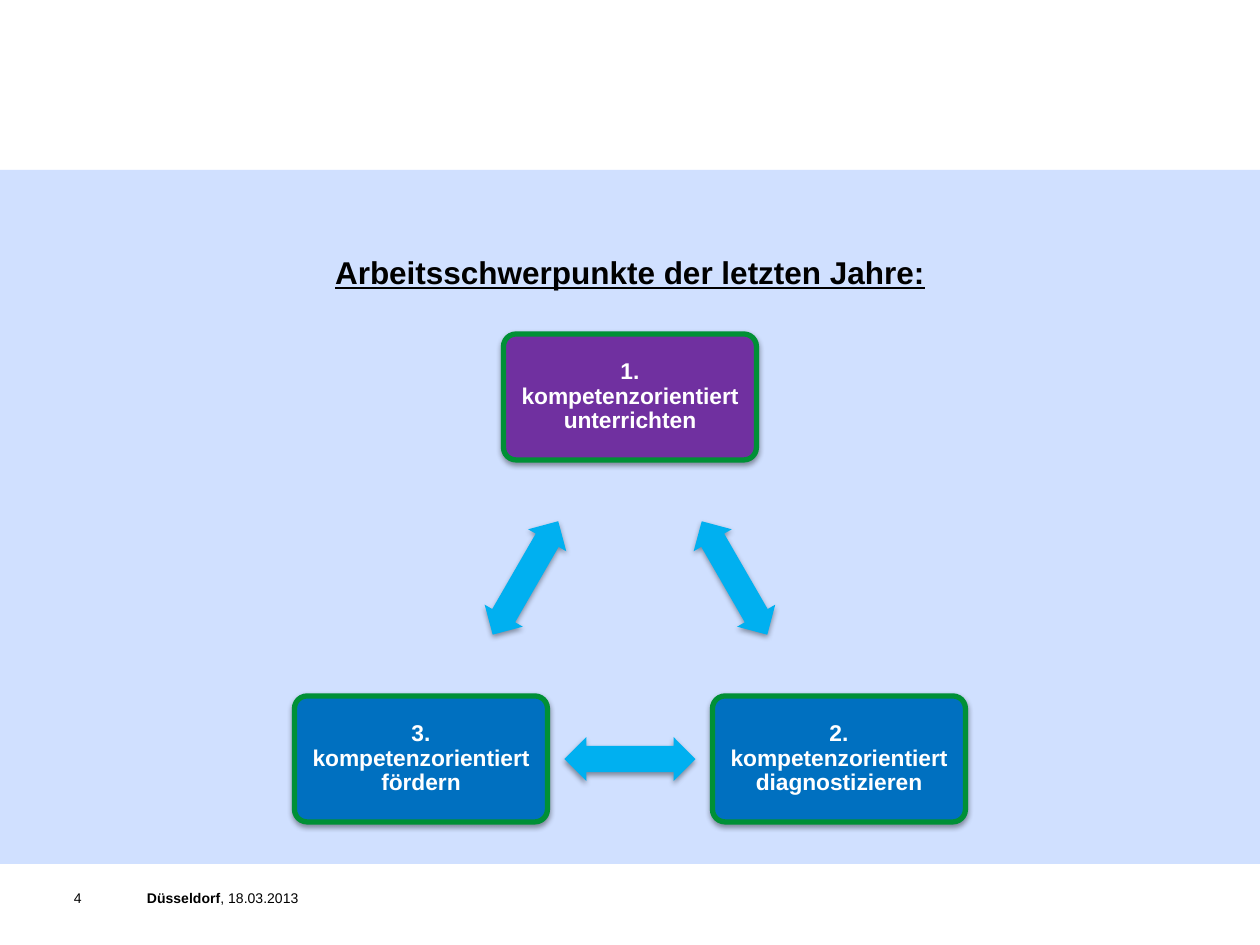
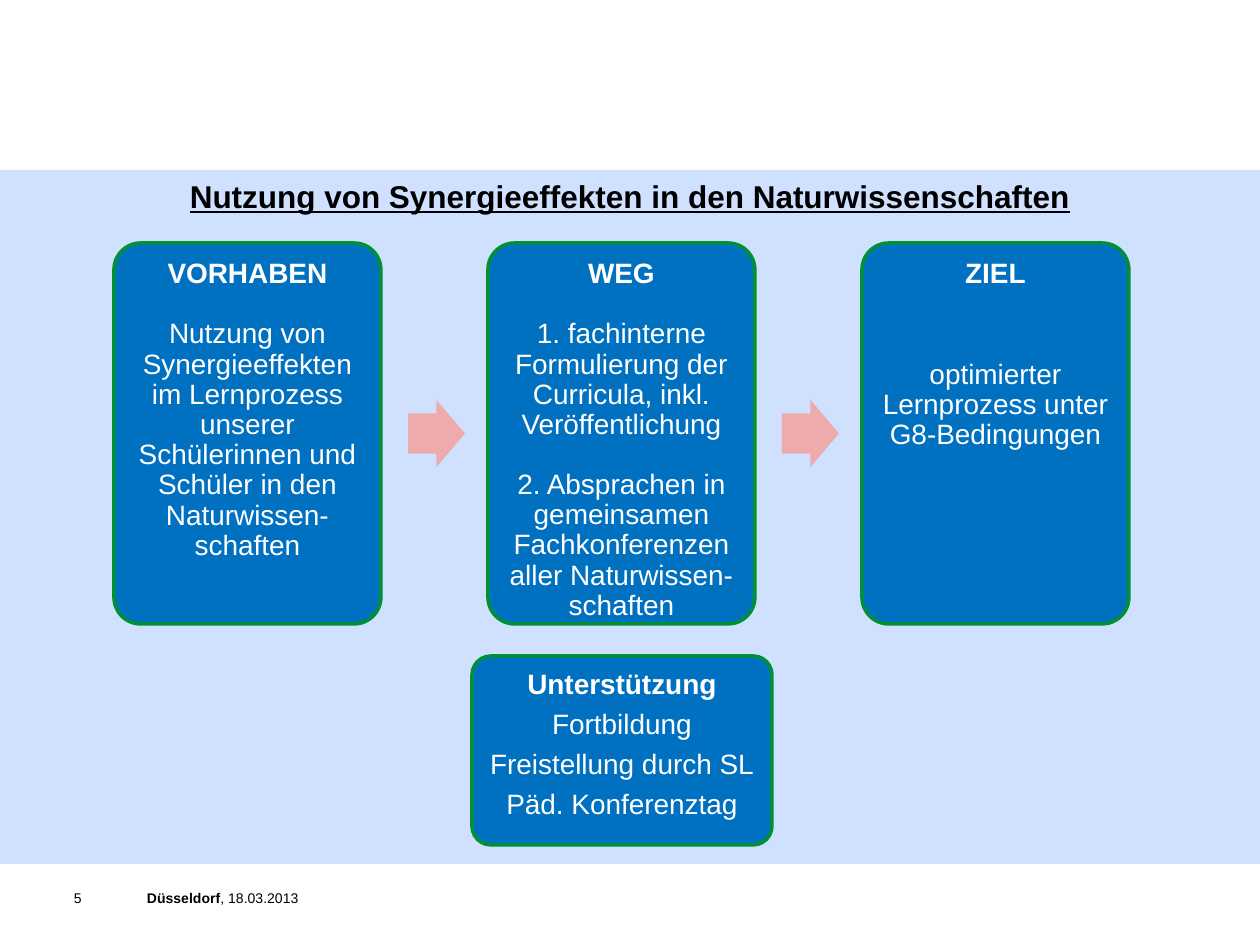
from dataclasses import dataclass
from math import atan2, degrees

from lxml import etree
from pptx import Presentation
from pptx.dml.color import RGBColor
from pptx.enum.shapes import MSO_SHAPE
from pptx.enum.text import MSO_ANCHOR, MSO_AUTO_SIZE, PP_ALIGN
from pptx.oxml import parse_xml
from pptx.oxml.ns import nsdecls, qn
from pptx.util import Pt

RECTANGLE = MSO_SHAPE.RECTANGLE
ROUNDED = MSO_SHAPE.ROUNDED_RECTANGLE
ARROW = MSO_SHAPE.RIGHT_ARROW
DOUBLE_ARROW = MSO_SHAPE.LEFT_RIGHT_ARROW
LEFT, CENTER = PP_ALIGN.LEFT, PP_ALIGN.CENTER
TOP, MIDDLE = MSO_ANCHOR.TOP, MSO_ANCHOR.MIDDLE
FIXED_SIZE = MSO_AUTO_SIZE.NONE
TITLE_ONLY = 5


@dataclass(frozen=True)
class Theme:
    font: str = "Arial"
    ink: str = "000000"
    white: str = "FFFFFF"
    band: str = "6699FF"
    band_opacity: int = 30
    blue: str = "0070C0"
    purple: str = "7030A0"
    green: str = "009036"
    sky: str = "00B0F0"
    rose: str = "EEABAC"
    title_size: int = 18
    focus_size: int = 13
    step_size: int = 16
    footer_size: int = 8


THEME = Theme()

# Content: a step paragraph is (text, space before in points)
PLACE, DATE = "Düsseldorf", ", 18.03.2013"

FOCUS_TITLE = "Arbeitsschwerpunkte der letzten Jahre:"
FOCUS_POINTS = [  # text, fill, centre in px
    ("1. kompetenzorientiert unterrichten", THEME.purple, (630, 397)),
    ("2. kompetenzorientiert diagnostizieren", THEME.blue, (839, 759)),
    ("3. kompetenzorientiert fördern", THEME.blue, (421, 759)),
]

SYNERGY_TITLE = "Nutzung von Synergieeffekten in den Naturwissenschaften"
STEPS = [
    ("VORHABEN", [("Nutzung von Synergieeffekten im Lernprozess unserer "
                   "Schülerinnen und Schüler in den Naturwissen-schaften", 17)]),
    ("WEG", [("1. fachinterne Formulierung der Curricula, inkl. Veröffentlichung", 17),
             ("2. Absprachen in gemeinsamen Fachkonferenzen aller "
              "Naturwissen-schaften", 17)]),
    ("ZIEL", [("optimierter Lernprozess unter G8-Bedingungen", 40)]),
]
SUPPORT = ("Unterstützung", [("Fortbildung", 5.6), ("Freistellung durch SL", 5.6),
                             ("Päd. Konferenztag", 5.6)])

# Geometry in px
PX = 914400 / 126
SLIDE_W, SLIDE_H = 1260, 945
BAND_Y, BAND_H = 170, 694
FOOTER_Y, FOOTER_H = 890, 47
TITLE_H = 40
FOCUS_W, FOCUS_H = 253, 126
LINK_W, LINK_H = 131, 44
STEP_X, STEP_Y, STEP_W, STEP_H, STEP_PITCH = 114, 243, 267, 381, 374
NEXT_W, NEXT_H, NEXT_GAP = 57, 67, 27
SUPPORT_BOX = (472, 656, 300, 189)


def emu(px):
    return round(px * PX)


def box(*lengths):
    return [emu(length) for length in lengths]


def style_runs(paragraph, size, color, bold=False):
    for run in paragraph.runs:
        run.font.name = THEME.font
        run.font.size = Pt(size)
        run.font.bold = bold
        run.font.color.rgb = RGBColor.from_string(color)


def set_frame(frame, inset, anchor):
    frame.word_wrap = True
    frame.auto_size = FIXED_SIZE
    frame.vertical_anchor = anchor
    frame.margin_left = frame.margin_right = emu(inset)
    frame.margin_top = frame.margin_bottom = emu(inset)


def add_shape(slide, kind, bounds, fill, outline=None, outline_width=0):
    shape = slide.shapes.add_shape(kind, *box(*bounds))
    shape.shadow.inherit = False
    shape.fill.solid()
    shape.fill.fore_color.rgb = RGBColor.from_string(fill)
    if outline:
        shape.line.color.rgb = RGBColor.from_string(outline)
        shape.line.width = Pt(outline_width)
    else:
        shape.line.fill.background()
    return shape


def drop_shadow(shape):
    effects = shape._element.spPr.find(qn("a:effectLst"))
    effects.append(parse_xml(
        f'<a:outerShdw {nsdecls("a")} blurRad="40000" dist="20000" dir="5400000" '
        'rotWithShape="0"><a:srgbClr val="000000"><a:alpha val="38000"/>'
        '</a:srgbClr></a:outerShdw>'))


def add_card(slide, bounds, fill, outline_width, inset, anchor):
    card = add_shape(slide, ROUNDED, bounds, fill, THEME.green, outline_width)
    card.adjustments[0] = 0.1
    set_frame(card.text_frame, inset, anchor)
    return card


def add_card_line(paragraph, text, size, bold, space_before=0):
    paragraph.text = text
    paragraph.alignment = CENTER
    paragraph.line_spacing = 0.9
    if space_before:
        paragraph.space_before = Pt(space_before)
    style_runs(paragraph, size, THEME.white, bold)


def add_step_card(slide, bounds, heading, lines):
    card = add_card(slide, bounds, THEME.blue, 2, 9, TOP)
    frame = card.text_frame
    add_card_line(frame.paragraphs[0], heading, THEME.step_size, True)
    for text, space_before in lines:
        add_card_line(frame.add_paragraph(), text, THEME.step_size, False, space_before)


def add_footer_text(slide, x, width, parts):
    footer = slide.shapes.add_textbox(*box(x, FOOTER_Y, width, FOOTER_H))
    set_frame(footer.text_frame, 0, TOP)
    paragraph = footer.text_frame.paragraphs[0]
    paragraph.alignment = LEFT
    for text in parts:
        paragraph.add_run().text = text
    style_runs(paragraph, THEME.footer_size, THEME.ink)
    return paragraph


def add_base_slide(prs, number, heading, title_y):
    slide = prs.slides.add_slide(prs.slide_layouts[TITLE_ONLY])

    # Translucent band, placed behind the title
    band = add_shape(slide, RECTANGLE, (0, BAND_Y, SLIDE_W, BAND_H), THEME.band)
    band_color = band._element.spPr.find(qn("a:solidFill"))[0]
    etree.SubElement(band_color, qn("a:alpha"), val=str(THEME.band_opacity * 1000))
    slide.shapes._spTree.insert(2, band._element)

    # Title
    title = slide.shapes.title
    title.left, title.top, title.width, title.height = box(0, title_y, SLIDE_W, TITLE_H)
    title.text_frame.text = heading
    set_frame(title.text_frame, 0, MIDDLE)
    paragraph = title.text_frame.paragraphs[0]
    paragraph.alignment = CENTER
    style_runs(paragraph, THEME.title_size, THEME.ink, True)
    paragraph.runs[0].font.underline = True

    # Footer
    add_footer_text(slide, 74, 40, [str(number)])
    imprint = add_footer_text(slide, 147, 264, [PLACE, DATE])
    imprint.runs[0].font.bold = True
    return slide


def build_focus_slide(prs):
    slide = add_base_slide(prs, 4, FOCUS_TITLE, 252)
    for index, (text, fill, (x, y)) in enumerate(FOCUS_POINTS):
        bounds = (x - FOCUS_W / 2, y - FOCUS_H / 2, FOCUS_W, FOCUS_H)
        card = add_card(slide, bounds, fill, 3, 6, MIDDLE)
        add_card_line(card.text_frame.paragraphs[0], text, THEME.focus_size, True)
        drop_shadow(card)

        # Double arrow halfway to the next point of the cycle
        next_x, next_y = FOCUS_POINTS[(index + 1) % len(FOCUS_POINTS)][2]
        link = add_shape(slide, DOUBLE_ARROW,
                         ((x + next_x - LINK_W) / 2, (y + next_y - LINK_H) / 2,
                          LINK_W, LINK_H), THEME.sky)
        link.adjustments[0], link.adjustments[1] = 0.6, 0.5
        link.rotation = round(degrees(atan2(next_y - y, next_x - x))) % 360
        drop_shadow(link)


def build_synergy_slide(prs):
    slide = add_base_slide(prs, 5, SYNERGY_TITLE, 176)
    for index, (heading, lines) in enumerate(STEPS):
        x = STEP_X + index * STEP_PITCH
        add_step_card(slide, (x, STEP_Y, STEP_W, STEP_H), heading, lines)
        if index < len(STEPS) - 1:
            arrow = add_shape(slide, ARROW,
                              (x + STEP_W + NEXT_GAP, STEP_Y + (STEP_H - NEXT_H) / 2,
                               NEXT_W, NEXT_H), THEME.rose)
            arrow.adjustments[0], arrow.adjustments[1] = 0.6, 0.5
    add_step_card(slide, SUPPORT_BOX, *SUPPORT)


def main():
    prs = Presentation()
    prs.slide_width, prs.slide_height = box(SLIDE_W, SLIDE_H)
    build_focus_slide(prs)
    build_synergy_slide(prs)
    prs.save("out.pptx")


if __name__ == "__main__":
    main()
